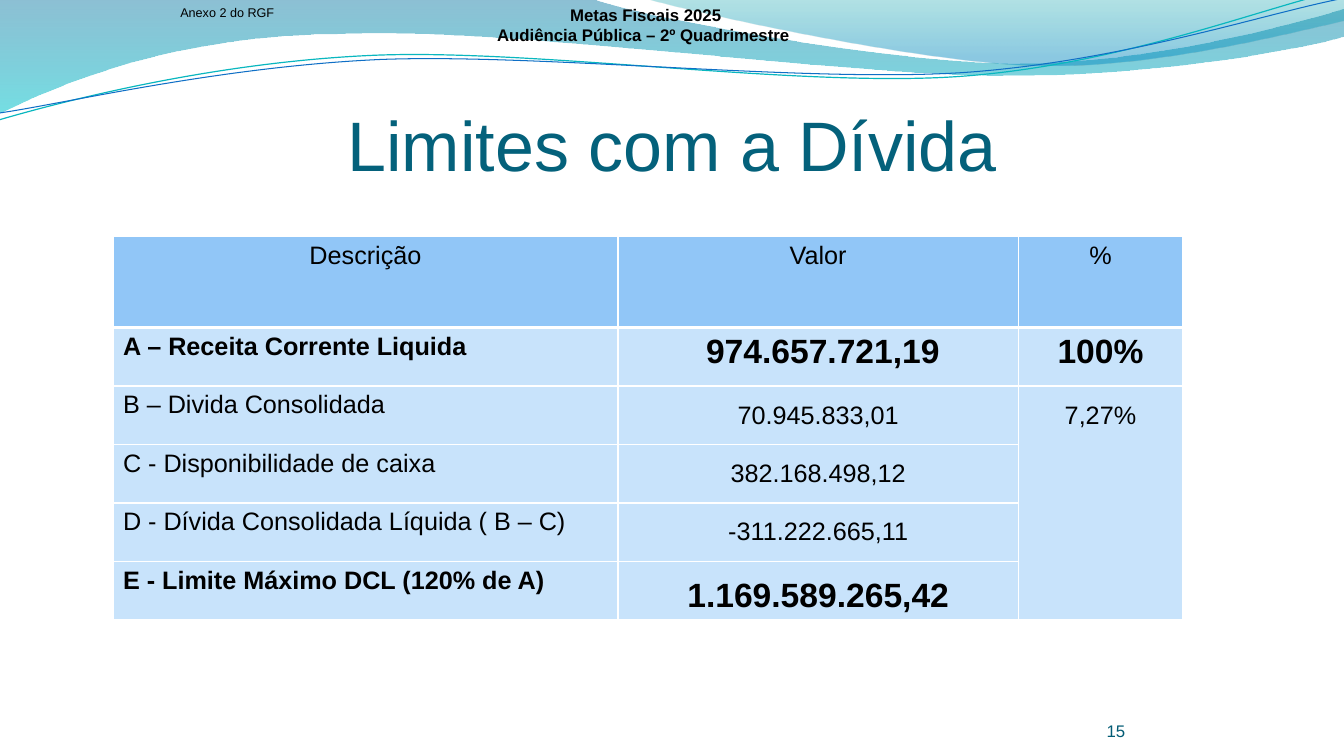
from math import cos, radians, sin
from lxml.etree import SubElement as Sub
from pptx import Presentation
from pptx.dml.color import RGBColor as Rgb
from pptx.enum.text import MSO_ANCHOR as Anchor, PP_ALIGN as Align
from pptx.oxml.ns import qn
from pptx.util import Inches, Pt

COLORS = {
    "title": "04617B", "page": "035C75", "text": "000000", "edge": "FFFFFF",
    "head": "91C6F7", "body": "C8E3FB", "deep": "0074A0", "aqua": "00C4CD",
    "sky": "008ABF", "sea": "00A0A8", "teal": "09B7BF", "blue": "0F6FC6",
}
WAVES = [
    ([(0, -0.01), (5.87, -0.01),
      (6.34, 0.17, 8.85, 0.63, 10.11, 0.63),
      (11.37, 0.63, 12.78, 0.26, 13.33, 0.09), (13.35, 0.36),
      (13.11, 0.44, 11.6, 0.76, 9.94, 0.75),
      (8.29, 0.75, 5.09, 0.28, 3.43, 0.34),
      (1.72, 0.35, 0.61, 0.83, -0.01, 1.13), (0, -0.01)],
     [(0, "deep", 45), (1, "aqua", 55)], 270),
    ([(6.39, -0.01), (6.79, 0.11, 9.09, 0.62, 10.25, 0.65),
      (11.41, 0.69, 12.82, 0.32, 13.33, 0.21), (13.33, 0), (6.39, -0.01)],
     [(0.2, "sky", 45), (1, "sea", 30)], 90),
]
CURVES = [
    ([(-0.01, 1.19), (0.64, 1, 2.11, 0.62, 3.69, 0.55),
      (5.27, 0.48, 7.89, 0.87, 9.5, 0.76),
      (11.1, 0.65, 12.51, 0.08, 13.31, -0.1)], "teal", 0.85),
    ([(0, 1.12), (0.63, 1.03, 2.18, 0.66, 3.78, 0.59),
      (5.37, 0.53, 7.96, 0.82, 9.55, 0.72),
      (11.15, 0.61, 12.55, 0.13, 13.34, -0.02)], "blue", 0.75),
]
TILT = 2.7
PIVOT = (6.66, 0.58)
WIDTHS = [5.01, 3.97, 1.63]
HEIGHTS = [0.9] + [0.58] * 5
ROWS = [
    ("Descrição", "Valor", "%"),
    ("A – Receita Corrente Liquida", " 974.657.721,19", "100%"),
    ("B – Divida Consolidada", "70.945.833,01", "7,27%"),
    ("C - Disponibilidade de caixa", "382.168.498,12", ""),
    ("D - Dívida Consolidada Líquida ( B – C)", "-311.222.665,11", ""),
    ("E - Limite Máximo DCL (120% de A)", "1.169.589.265,42", ""),
]
BOLD = (1, 5)


def tint(name):
    return Rgb.from_string(COLORS[name])


def write(frame, text, size=18, color="text", bold=False, align=Align.LEFT):
    for num, line in enumerate(text.split("\n")):
        para = frame.add_paragraph() if num else frame.paragraphs[0]
        para.alignment = align
        run = para.add_run()
        run.text = line
        run.font.name = "Arial"
        run.font.size = Pt(size)
        run.font.bold = bold
        run.font.color.rgb = tint(color)


def label(slide, text, box, inset=(0.1, 0.05, 0.1, 0.05),
          anchor=Anchor.TOP, **form):
    frame = slide.shapes.add_textbox(*map(Inches, box)).text_frame
    frame.word_wrap = True
    frame.vertical_anchor = anchor
    (frame.margin_left, frame.margin_top,
     frame.margin_right, frame.margin_bottom) = map(Inches, inset)
    write(frame, text, **form)


def turn(point, angle):
    x, y = point[0] - PIVOT[0], point[1] - PIVOT[1]
    c, s = cos(radians(angle)), sin(radians(angle))
    return PIVOT[0] + x * c - y * s, PIVOT[1] + x * s + y * c


def draw(slide, steps, close, tilt=0):
    points = [turn(pair, tilt) for step in steps
              for pair in zip(step[::2], step[1::2])]
    points = [(Inches(x), Inches(y)) for x, y in points]
    pen = slide.shapes.build_freeform(*points[0])
    pen.add_line_segments(points[1:], close=close)
    shape = pen.convert_to_shape()
    shape.shadow.inherit = False
    shape.rotation = -tilt % 360
    lines = iter(list(shape.element.iter(qn("a:lnTo"))))
    for step in steps[1:]:
        line = next(lines)
        if len(step) == 6:
            line.tag = qn("a:cubicBezTo")
            for _ in range(2):
                extra = next(lines)
                line.append(extra[0])
                extra.getparent().remove(extra)
    return shape


def wave(slide, steps, stops, angle):
    shape = draw(slide, steps, True)
    shape.line.fill.background()
    shape.fill.gradient()
    shape.fill.gradient_angle = angle
    marks = shape.fill.gradient_stops
    for mark, (place, name, _) in zip(marks, stops):
        mark.position = place
        mark.color.rgb = tint(name)
    tones = shape.element.spPr.iter(qn("a:srgbClr"))
    for tone, (_, _, alpha) in zip(list(tones), stops):
        Sub(tone, qn("a:alpha"), val=str(alpha * 1000))


def curve(slide, steps, color, width):
    shape = draw(slide, steps, False, TILT)
    shape.fill.background()
    shape.line.color.rgb = tint(color)
    shape.line.width = Pt(width)


def border(cell, side, width):
    line = Sub(cell._tc.get_or_add_tcPr(), qn(f"a:ln{side}"),
               w=str(Pt(width)))
    if width:
        fill = Sub(line, qn("a:solidFill"))
        Sub(fill, qn("a:srgbClr"), val=COLORS["edge"])
    else:
        Sub(line, qn("a:noFill"))


def edges(cell, row, col):
    top = 3 if row == 1 else 0.96
    low = 3 if row == 0 else 0.96
    if col == 2:
        top = 0 if row > 2 else top
        low = 0 if 2 <= row < 5 else low
    for side, width in zip("LRTB", (0.96, 0.96, top, low)):
        border(cell, side, width)


def grid(slide):
    table = slide.shapes.add_table(
        len(ROWS), len(WIDTHS), Inches(1.12), Inches(2.35),
        Inches(sum(WIDTHS)), Inches(sum(HEIGHTS))).table
    table.horz_banding = False
    for part, width in zip(table.columns, WIDTHS):
        part.width = Inches(width)
    for part, height in zip(table.rows, HEIGHTS):
        part.height = Inches(height)
    for row, texts in enumerate(ROWS):
        for col, text in enumerate(texts):
            cell = table.cell(row, col)
            edges(cell, row, col)
            cell.fill.solid()
            cell.fill.fore_color.rgb = tint("body" if row else "head")
            if col and row > 1:
                cell.vertical_anchor = Anchor.MIDDLE
            if text:
                strong = row in BOLD
                write(cell.text_frame, text, bold=strong,
                      size=24 if strong and col else 18,
                      align=Align.CENTER if col or not row else Align.LEFT)
    limit = table.cell(5, 1)
    limit.vertical_anchor = Anchor.BOTTOM
    limit.margin_left = limit.margin_right = Inches(0.01)


def main():
    deck = Presentation()
    deck.slide_width, deck.slide_height = Inches(13.33), Inches(7.5)
    slide = deck.slides.add_slide(deck.slide_layouts[6])
    for item in WAVES:
        wave(slide, *item)
    for item in CURVES:
        curve(slide, *item)
    label(slide, "Limites com a Dívida", (2.17, 0.77, 9, 1.25),
          inset=(0, 0.05, 0, 0), anchor=Anchor.MIDDLE,
          size=50, color="title", align=Align.CENTER)
    label(slide, "15", (10.33, 6.95, 0.83, 0.4), inset=(0, 0, 0, 0),
          anchor=Anchor.BOTTOM, size=12, color="page", align=Align.RIGHT)
    grid(slide)
    label(slide, "Anexo 2 do RGF", (1.69, 0, 1.36, 0.25), size=9)
    label(slide, "Metas Fiscais 2025\nAudiência Pública – 2º Quadrimestre ",
          (4.71, 0, 3.39, 0.5), anchor=Anchor.MIDDLE,
          size=12, bold=True, align=Align.CENTER)
    deck.save("out.pptx")


if __name__ == "__main__":
    main()
